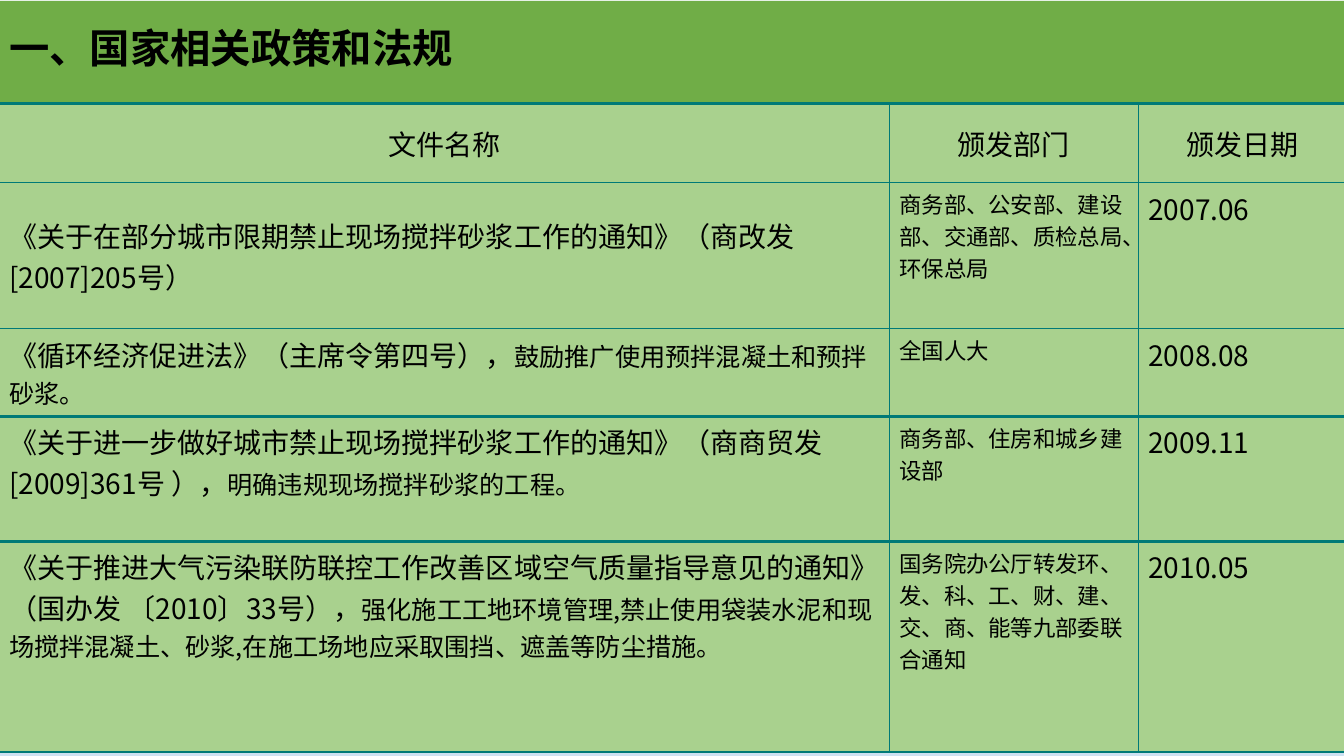
"""Builds a slide that lists national policies and regulations in a table."""
import pptx
import pptx.dml.color
import pptx.enum.text
import pptx.oxml
import pptx.oxml.ns
import pptx.util

WIDTH, HEIGHT = 13.33, 7.5
COLORS = {"band": "70AD47", "cell": "A9D18E", "border": "007A77",
          "text": "000000", "sky": "F7FAFD", "mist": "CEE1F2"}
LATIN, CJK = "Arial", "Noto Sans CJK SC"
THIN, THICK = 1, 2.25
LEFT, BAND_TOP, TABLE_TOP = -0.01, 0.01, 1.03
COLUMNS = [8.83, 2.47, 2.06]
ROWS = [0.78, 1.45, 0.87, 1.24, 2.09]
ROW_RULES = [THICK, THIN, THIN, THICK, THICK, THICK]
COLUMN_RULES = [THICK, THIN, THIN, THICK]

HEADINGS = ["文件名称", "颁发部门", "颁发日期"]
POLICIES = [
    ("《关于在部分城市限期禁止现场搅拌砂浆工作的通知》（商改发[2007]205号）", "",
     "商务部、公安部、建设部、交通部、质检总局、环保总局", "2007.06"),
    ("《循环经济促进法》（主席令第四号），", "鼓励推广使用预拌混凝土和预拌砂浆。",
     "全国人大", "2008.08"),
    ("《关于进一步做好城市禁止现场搅拌砂浆工作的通知》（商商贸发[2009]361号 ），",
     "明确违规现场搅拌砂浆的工程。", "商务部、住房和城乡建设部", "2009.11"),
    ("《关于推进大气污染联防联控工作改善区域空气质量指导意见的通知》（国办发 〔2010〕33号），",
     "强化施工工地环境管理,禁止使用袋装水泥和现场搅拌混凝土、砂浆,在施工场地应采取围挡、遮盖等防尘措施。",
     "国务院办公厅转发环、发、科、工、财、建、交、商、能等九部委联合通知", "2010.05"),
]


def color(name):
    return pptx.dml.color.RGBColor.from_string(COLORS[name])


def write(para, text, size=20, font=LATIN, bold=False):
    span = para.add_run()
    span.text = text
    span.font.size = pptx.util.Pt(size)
    span.font.name = font
    span.font.bold = bold
    span.font.color.rgb = color("text")


class PolicyPage:
    def __init__(self, deck):
        self.deck = deck
        self.page = deck.slides.add_slide(deck.slide_layouts[5])

    def across(self, share):
        return round(self.deck.slide_width * share)

    def down(self, share):
        return round(self.deck.slide_height * share)

    def background(self):
        fill = self.page.background.fill
        fill.gradient()
        fill.gradient_angle = 270
        for stop, name in zip(fill.gradient_stops, ("sky", "mist")):
            stop.color.rgb = color(name)

    def title(self, text):
        box = self.page.shapes.title
        box.left, box.top = self.across(LEFT / WIDTH), self.down(BAND_TOP / HEIGHT)
        box.width = self.across(sum(COLUMNS) / WIDTH)
        box.height = self.down((TABLE_TOP - BAND_TOP) / HEIGHT)
        box.fill.solid()
        box.fill.fore_color.rgb = color("band")
        frame = box.text_frame
        frame.auto_size = pptx.enum.text.MSO_AUTO_SIZE.NONE
        frame.vertical_anchor = pptx.enum.text.MSO_ANCHOR.MIDDLE
        frame.margin_bottom = self.down(0.013)
        para = frame.paragraphs[0]
        para.alignment = pptx.enum.text.PP_ALIGN.LEFT
        para.line_spacing = 0.9
        write(para, text, size=28.8, bold=True)

    def border(self, cell, side, width):
        line = pptx.oxml.parse_xml(
            f'<a:{side} {pptx.oxml.ns.nsdecls("a")} w="{pptx.util.Pt(width)}">'
            f'<a:solidFill><a:srgbClr val="{COLORS["border"]}"/></a:solidFill>'
            f'</a:{side}>')
        cell._tc.get_or_add_tcPr().append(line)

    def cell(self, table, row, column, *spans, middle=False, center=False):
        cell = table.cell(row, column)
        for side, width in (("lnL", COLUMN_RULES[column]), ("lnR", COLUMN_RULES[column + 1]),
                            ("lnT", ROW_RULES[row]), ("lnB", ROW_RULES[row + 1])):
            self.border(cell, side, width)
        cell.fill.solid()
        cell.fill.fore_color.rgb = color("cell")
        anchors = pptx.enum.text.MSO_ANCHOR
        cell.vertical_anchor = anchors.MIDDLE if middle else anchors.TOP
        para = cell.text_frame.paragraphs[0]
        if center:
            para.alignment = pptx.enum.text.PP_ALIGN.CENTER
        for text, size, font in spans:
            write(para, text, size=size, font=font)

    def table(self):
        table = self.page.shapes.add_table(
            len(ROWS), len(COLUMNS), self.across(LEFT / WIDTH), self.down(TABLE_TOP / HEIGHT),
            self.across(sum(COLUMNS) / WIDTH), self.down(sum(ROWS) / HEIGHT)).table
        table.first_row = table.horz_banding = False
        for column, width in zip(table.columns, COLUMNS):
            column.width = self.across(width / WIDTH)
        for row, height in zip(table.rows, ROWS):
            row.height = self.down(height / HEIGHT)
        for column, heading in enumerate(HEADINGS):
            self.cell(table, 0, column, (heading, 20, LATIN), middle=True, center=True)
        for row, (name, note, issuer, date) in enumerate(POLICIES, start=1):
            spans = [(name, 20, CJK)]
            if note:
                spans.append((note, 18, CJK))
            self.cell(table, row, 0, *spans, middle=row == 1)
            self.cell(table, row, 1, (issuer, 16, LATIN))
            self.cell(table, row, 2, (date, 20, CJK))


def main():
    deck = pptx.Presentation()
    deck.slide_width = pptx.util.Inches(WIDTH)
    deck.slide_height = pptx.util.Inches(HEIGHT)
    policy_page = PolicyPage(deck)
    policy_page.background()
    policy_page.title("一、国家相关政策和法规")
    policy_page.table()
    deck.save("out.pptx")


if __name__ == "__main__":
    main()
